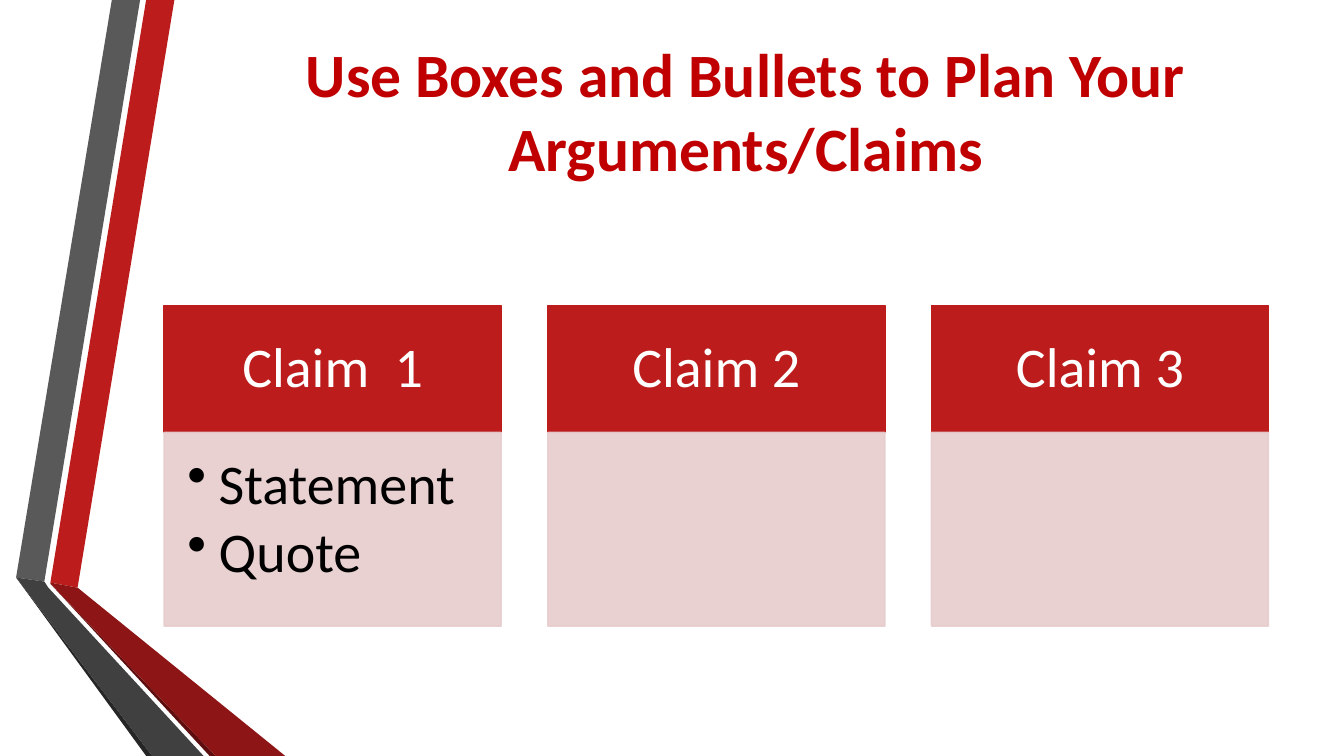
from lxml import etree
from pptx import Presentation
from pptx.dml.color import RGBColor
from pptx.enum import shapes, text
from pptx.oxml.ns import qn
from pptx.util import Inches, Pt

RED = RGBColor(0xBC, 0x1C, 0x1C)
DARK_RED = RGBColor(0x8D, 0x15, 0x15)
DEEP_RED = RGBColor(0x5E, 0x0E, 0x0E)
TITLE_RED = RGBColor(0xC0, 0x00, 0x00)
PINK = RGBColor(0xE7, 0xCD, 0xCD)
GRAY = RGBColor(0x59, 0x59, 0x59)
DARK_GRAY = RGBColor(0x40, 0x40, 0x40)
DEEP_GRAY = RGBColor(0x26, 0x26, 0x26)
WHITE = RGBColor(0xFF, 0xFF, 0xFF)
BLACK = RGBColor(0, 0, 0)
FONT = "Calibri"

# Folded ribbon: outline of each face, relative to its box
RIBBON_FACES = [
    (RED, [(0.34, 5.78), (0.61, 5.83), (1.57, 0), (1.29, 0)]),
    (GRAY, [(1.23, 0), (0.95, 0), (0, 5.73), (0.28, 5.77)]),
    (DEEP_GRAY, [(0, 5.73), (1.29, 7.5), (1.35, 7.5)]),
    (DEEP_RED, [(0.34, 5.79), (1.92, 7.5), (1.98, 7.5)]),
    (DARK_RED, [(0.34, 5.79), (1.98, 7.5), (2.67, 7.5), (0.61, 5.83), (0.34, 5.78)]),
    (DARK_GRAY, [(1.86, 7.5), (0.32, 5.83), (0.28, 5.77), (0, 5.73), (1.35, 7.5)]),
]

CLAIMS = [("Claim  1", ["Statement", "Quote"]), ("Claim 2", []), ("Claim 3", [])]


def format_paragraph(p, size, color, bold=False):
    for r in p.runs:
        r.font.name = FONT
        r.font.size = Pt(size)
        r.font.bold = bold
        r.font.color.rgb = color


def set_margins(tf, left, top, right, bottom):
    tf.margin_left, tf.margin_top = Inches(left), Inches(top)
    tf.margin_right, tf.margin_bottom = Inches(right), Inches(bottom)


def add_bullet(p, indent):
    pPr = p._p.get_or_add_pPr()
    pPr.set("marL", str(Inches(indent)))
    pPr.set("indent", str(-Inches(indent)))
    etree.SubElement(pPr, qn("a:buChar")).set("char", "•")


def add_ribbon(slide, left, top):
    for color, points in RIBBON_FACES:
        outline = [(Inches(left + x), Inches(top + y)) for x, y in points]
        builder = slide.shapes.build_freeform(*outline[0])
        builder.add_line_segments(outline[1:], close=True)
        sp = builder.convert_to_shape()
        sp.shadow.inherit = False
        sp.fill.solid()
        sp.fill.fore_color.rgb = color
        sp.line.fill.background()


def add_title(slide, left, top, width, height):
    sp = slide.shapes.add_textbox(Inches(left), Inches(top), Inches(width), Inches(height))
    tf = sp.text_frame
    tf.word_wrap = True
    tf.vertical_anchor = text.MSO_ANCHOR.MIDDLE
    tf.text = "Use Boxes and Bullets to Plan Your Arguments/Claims"
    p = tf.paragraphs[0]
    p.alignment = text.PP_ALIGN.CENTER
    format_paragraph(p, 44, TITLE_RED, bold=True)


def add_box(slide, left, top, width, height, color, opacity=100):
    sp = slide.shapes.add_shape(shapes.MSO_SHAPE.RECTANGLE, Inches(left), Inches(top),
                                Inches(width), Inches(height))
    sp.shadow.inherit = False
    sp.fill.solid()
    sp.fill.fore_color.rgb = color
    sp.line.color.rgb = color
    sp.line.width = Pt(1.25)
    if opacity < 100:
        for clr in sp._element.spPr.iter(qn("a:srgbClr")):
            etree.SubElement(clr, qn("a:alpha")).set("val", str(opacity * 1000))
    sp.text_frame.word_wrap = True
    return sp


def add_claim(slide, left, top, width, height, heading, points):
    head_height = 1.26

    # Heading
    tf = add_box(slide, left, top, width, head_height, RED).text_frame
    set_margins(tf, 0.31, 0.18, 0.31, 0.18)
    tf.vertical_anchor = text.MSO_ANCHOR.MIDDLE
    tf.text = heading
    p = tf.paragraphs[0]
    p.alignment = text.PP_ALIGN.CENTER
    p.line_spacing = 0.9
    format_paragraph(p, 40, WHITE)

    # Bulleted body
    body = add_box(slide, left, top + head_height, width, height - head_height, PINK, 90)
    if not points:
        return
    tf = body.text_frame
    set_margins(tf, 0.23, 0.23, 0.31, 0.35)
    tf.vertical_anchor = text.MSO_ANCHOR.TOP
    tf.text = "\n".join(points)
    for p in tf.paragraphs:
        p.level = 1
        p.alignment = text.PP_ALIGN.LEFT
        p.line_spacing = 0.9
        p.space_after = Pt(6)
        add_bullet(p, 0.31)
        format_paragraph(p, 40, BLACK)


def add_claims(slide, left, top, width, height):
    box_width = 3.34
    step = (width - box_width) / (len(CLAIMS) - 1)
    for i, (heading, points) in enumerate(CLAIMS):
        add_claim(slide, left + i * step, top, box_width, height, heading, points)


def main():
    prs = Presentation()
    prs.slide_width, prs.slide_height = Inches(13.33), Inches(7.5)
    slide = prs.slides.add_slide(prs.slide_layouts[6])
    add_ribbon(slide, 0.16, 0)
    add_title(slide, 1.92, 0.13, 10.96, 1.92)
    add_claims(slide, 1.63, 3.03, 10.95, 3.18)
    prs.save("out.pptx")


if __name__ == "__main__":
    main()
